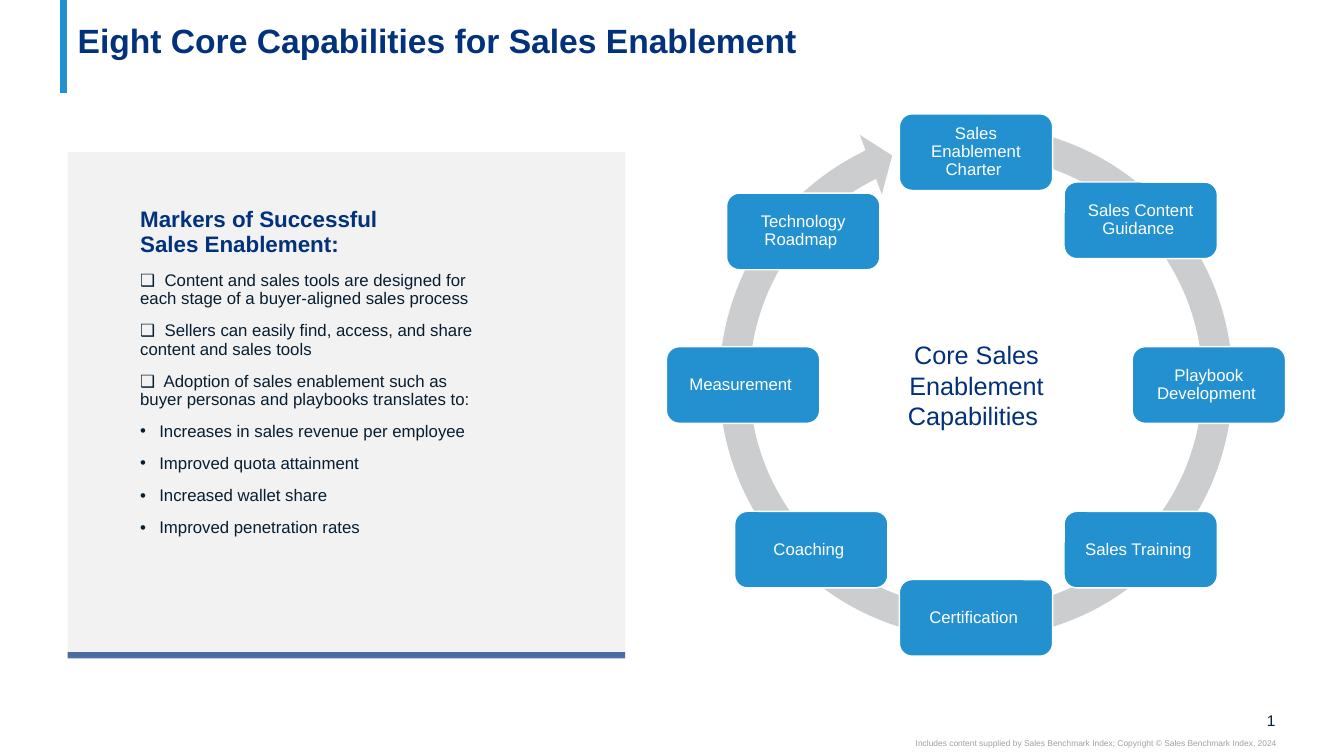
from dataclasses import dataclass
from math import cos, radians, sin

from lxml.etree import SubElement
from pptx import Presentation
from pptx.dml.color import RGBColor
from pptx.enum.shapes import MSO_CONNECTOR as Connector, MSO_SHAPE as Preset
from pptx.enum.text import MSO_ANCHOR as Anchor, MSO_AUTO_SIZE as AutoSize, PP_ALIGN as Align
from pptx.oxml.ns import qn
from pptx.util import Inches, Pt


@dataclass(frozen=True)
class Theme:
    font: str = "Arial"
    navy: str = "03327C"
    hub: str = "02307A"
    blue: str = "2391CF"
    ink: str = "071E31"
    ring: str = "CCCDCE"
    panel: str = "F2F2F2"
    muted: str = "A0A0A0"
    white: str = "FFFFFF"
    title_size: int = 24
    hub_size: int = 18
    heading_size: int = 16
    text_size: int = 12
    number_size: int = 11
    footer_size: int = 6


THEME = Theme()
TITLE = "Eight Core Capabilities for Sales Enablement"
HEADING = "Markers of Successful Sales Enablement:"
MARKERS = [
    "❑  Content and sales tools are designed for each stage of a buyer-aligned sales process",
    "❑  Sellers can easily find, access, and share content and sales tools",
    "❑  Adoption of sales enablement such as buyer personas and playbooks translates to:",
]
RESULTS = [
    "Increases in sales revenue per employee",
    "Improved quota attainment",
    "Increased wallet share",
    "Improved penetration rates",
]
HUB = "Core Sales Enablement Capabilities "
FOOTER = "Includes content supplied by Sales Benchmark Index; Copyright © Sales Benchmark Index, 2024"

# Each capability, clockwise from the top, with its offset from an even spacing
CAPABILITIES = [
    ("Sales Enablement Charter ", (0, 0)),
    ("Sales Content Guidance ", (0, 0)),
    ("Playbook Development ", (0, 0)),
    ("Sales Training ", (0, 0)),
    ("Certification ", (0, 0)),
    ("Coaching ", (0, 0)),
    ("Measurement ", (0, 0)),
    ("Technology Roadmap ", (-0.08, 0.11)),
]
RING_CENTER = (9.68, 3.82)
RING_RADIUS = 2.31
NODE_SIZE = (1.52, 0.76)
ARROW_ADJUSTMENTS = (0.055, 3.307, 146.516, 168.729, 0.058)


def rgb(color):
    return RGBColor.from_string(color)


def place(shape, left, top, width, height):
    box = {"left": left, "top": top, "width": width, "height": height}
    for name, value in box.items():
        setattr(shape, name, Inches(value))


def set_frame(shape, margins=(0, 0, 0, 0), anchor=Anchor.TOP):
    """Set wrapping, anchor and the left, top, right and bottom margins."""
    frame = shape.text_frame
    frame.word_wrap = True
    frame.auto_size = AutoSize.NONE
    frame.vertical_anchor = anchor
    for side, margin in zip(("left", "top", "right", "bottom"), margins):
        setattr(frame, f"margin_{side}", Inches(margin))
    return frame


def style_font(font, size, color, bold=False):
    values = {"name": THEME.font, "size": Pt(size), "bold": bold}
    for name, value in values.items():
        setattr(font, name, value)
    font.color.rgb = rgb(color)


def write(para, text, size, color, bold=False, align=Align.LEFT, spacing=0.9, before=0):
    values = {"alignment": align, "line_spacing": spacing, "space_before": Pt(before)}
    for name, value in values.items():
        setattr(para, name, value)
    span = para.add_run()
    span.text = text
    style_font(span.font, size, color, bold)


def set_bullet(para, symbol=None, indent=0):
    """Give a hanging bullet, or none when there is no symbol."""
    properties = para._p.get_or_add_pPr()
    properties.set("marL", str(Inches(indent)))
    properties.set("indent", str(-Inches(indent)))
    if symbol:
        SubElement(properties, qn("a:buChar"), char=symbol)
    else:
        SubElement(properties, qn("a:buNone"))


def add_text(page, box, margins=(0, 0, 0, 0), anchor=Anchor.TOP):
    shape = page.shapes.add_textbox(*map(Inches, box))
    return set_frame(shape, margins, anchor).paragraphs[0]


def add_block(shapes, preset, box, fill, line=None):
    shape = shapes.add_shape(preset, *map(Inches, box))
    shape.shadow.inherit = False
    shape.fill.solid()
    shape.fill.fore_color.rgb = rgb(fill)
    if line:
        shape.line.color.rgb = rgb(line)
        shape.line.width = Pt(1)
    else:
        shape.line.fill.background()
    return shape


def add_rule(page, start, end, color, width, opacity=100):
    rule = page.shapes.add_connector(Connector.STRAIGHT, *map(Inches, start + end))
    rule.line.color.rgb = rgb(color)
    rule.line.width = Pt(width)
    if opacity < 100:
        tint = rule.line.fill.fore_color and rule.element.find(".//" + qn("a:srgbClr"))
        SubElement(tint, qn("a:alpha"), val=str(opacity * 1000))
    SubElement(rule.element.spPr, qn("a:effectLst"))


def add_page_number(page):
    para = add_text(page, (12.32, 7.05, 0.33, 0.19), anchor=Anchor.MIDDLE)
    write(para, "2", THEME.number_size, THEME.ink, align=Align.RIGHT, spacing=1)
    span = para.runs[0]._r
    span.tag = qn("a:fld")
    span.set("id", "{B6F15528-21DE-4FAA-801E-634DDDAF4B2B}")
    span.set("type", "slidenum")


def fill_markers(heading, listing):
    place(heading, 1.29, 1.74, 3.19, 1.15)
    para = set_frame(heading, (0.1, 0.33, 0.15, 0.05)).paragraphs[0]
    set_bullet(para)
    write(para, HEADING, THEME.heading_size, THEME.navy, bold=True)

    place(listing, 1.29, 2.31, 3.63, 4.03)
    frame = set_frame(listing, (0.1, 0.39, 0.1, 0.05))
    for index, text in enumerate(MARKERS + RESULTS):
        para = frame.add_paragraph() if index else frame.paragraphs[0]
        if text in RESULTS:
            para.level = 1
            set_bullet(para, "•", 0.19)
        else:
            set_bullet(para)
        write(para, text, THEME.text_size, THEME.ink, before=10 if index else 0)


def add_cycle(page):
    cycle = page.shapes.add_group_shape().shapes
    arrow = add_block(cycle, Preset.CIRCULAR_ARROW, (6.97, 1.08, 5.42, 5.42), THEME.ring)
    for index, value in enumerate(ARROW_ADJUSTMENTS):
        arrow.adjustments[index] = value
    width, height = NODE_SIZE
    for index, (label, (shift_x, shift_y)) in enumerate(CAPABILITIES):
        angle = radians(index * 360 / len(CAPABILITIES))
        left = RING_CENTER[0] + RING_RADIUS * sin(angle) + shift_x - width / 2
        top = RING_CENTER[1] - RING_RADIUS * cos(angle) + shift_y - height / 2
        node = add_block(cycle, Preset.ROUNDED_RECTANGLE, (left, top, width, height),
                         THEME.blue, THEME.white)
        para = set_frame(node, (0.05,) * 4, Anchor.MIDDLE).paragraphs[0]
        write(para, label, THEME.text_size, THEME.white, align=Align.CENTER)


def main():
    deck = Presentation()
    deck.slide_width, deck.slide_height = Inches(13.33), Inches(7.5)
    page = deck.slides.add_slide(deck.slide_layouts.get_by_name("Two Content"))
    title, heading, listing = page.placeholders

    panel = add_block(page.shapes, Preset.RECTANGLE, (0.67, 1.51, 5.53, 5), THEME.panel)
    title.element.addprevious(panel.element)
    place(title, 0.67, 0.14, 11.99, 0.84)
    para = set_frame(title, (0.1, 0.1, 0.1, 0)).paragraphs[0]
    write(para, TITLE, THEME.title_size, THEME.navy, bold=True)
    fill_markers(heading, listing)
    add_cycle(page)
    hub = add_text(page, (8.56, 3.32, 2.25, 1.01), (0.1, 0.05, 0.1, 0.05))
    write(hub, HUB, THEME.hub_size, THEME.hub, align=Align.CENTER, spacing=1)

    add_rule(page, (0.63, 0), (0.63, 0.92), THEME.blue, 5)
    add_rule(page, (0.67, 6.5), (6.2, 6.5), THEME.navy, 4.5, opacity=70)
    add_page_number(page)
    footer = add_text(page, (7.5, 7.32, 5.16, 0.1))
    write(footer, FOOTER, THEME.footer_size, THEME.muted, align=Align.RIGHT, spacing=1)
    deck.save("out.pptx")


if __name__ == "__main__":
    main()
